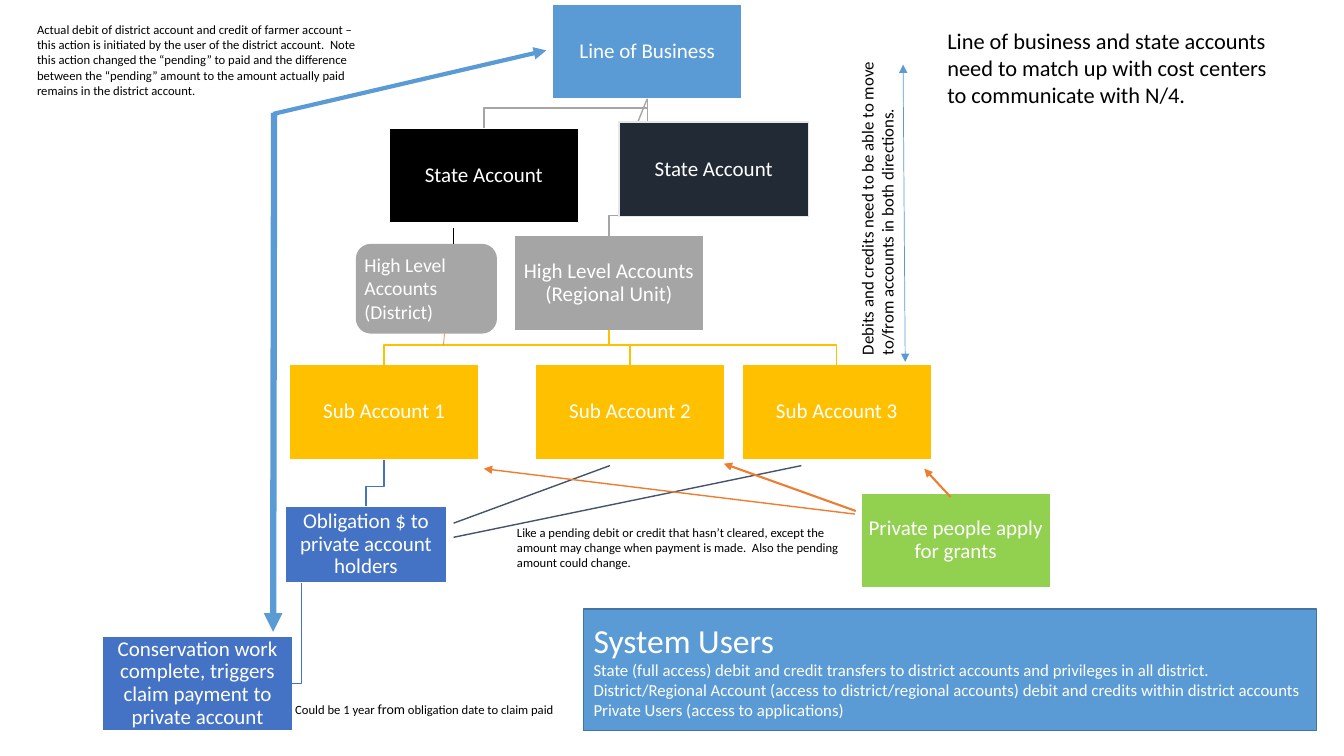
from dataclasses import dataclass

from lxml.etree import SubElement
from pptx import Presentation
from pptx.dml.color import RGBColor
from pptx.enum.shapes import MSO_CONNECTOR, MSO_SHAPE
from pptx.enum.text import MSO_ANCHOR, MSO_AUTO_SIZE, PP_ALIGN
from pptx.oxml.ns import qn
from pptx.util import Pt

BOTTOM, LEFT = 2, 1
BOX_WIDTH, BOX_HEIGHT = 135.4, 67.7
SUB_TOP = 260.6
BEND_RISE = 14.2


@dataclass(frozen=True)
class Theme:
    font: str = "Calibri"
    white: str = "FFFFFF"
    black: str = "000000"
    blue: str = "5B9BD5"
    blue_edge: str = "43739E"
    royal: str = "4472C4"
    gray: str = "A5A5A5"
    district: str = "A6A6A6"
    navy: str = "222A35"
    navy_edge: str = "E7E7E7"
    slate: str = "44546A"
    gold: str = "FFC000"
    green: str = "92D050"
    orange: str = "ED7D31"
    heading: int = 24
    remark: int = 16
    label: int = 15
    district_label: int = 14
    body: int = 12
    small_plus: int = 10
    small: int = 9


class Chart:
    def __init__(self, page, theme):
        self.page = page
        self.theme = theme

    def style_line(self, line, color, width):
        line.color.rgb = RGBColor.from_string(color)
        line.width = Pt(width)

    def style_text(self, para, size, color):
        for span in para.runs:
            span.font.name = self.theme.font
            span.font.size = Pt(size)
            span.font.color.rgb = RGBColor.from_string(color)

    def shape(self, kind, left, top, width, height, fill, edge=None):
        shape = self.page.shapes.add_shape(kind, Pt(left), Pt(top), Pt(width), Pt(height))
        shape.shadow.inherit = False
        shape.fill.solid()
        shape.fill.fore_color.rgb = RGBColor.from_string(fill)
        if edge:
            self.style_line(shape.line, edge, 1)
        else:
            shape.line.fill.background()
        return shape

    def caption(self, shape, text, sizes, inset=None, align=PP_ALIGN.LEFT,
                anchor=MSO_ANCHOR.MIDDLE):
        """Fill a shape with white text, one type size for each line."""
        frame = shape.text_frame
        frame.text = text
        frame.word_wrap = True
        frame.vertical_anchor = anchor
        if inset is not None:
            frame.margin_left = frame.margin_right = Pt(inset)
            frame.margin_top = frame.margin_bottom = Pt(inset)
        for para, size in zip(frame.paragraphs, sizes):
            para.alignment = align
            self.style_text(para, size, self.theme.white)

    def account(self, text, left, top, fill, edge=None, width=BOX_WIDTH, height=BOX_HEIGHT):
        box = self.shape(MSO_SHAPE.RECTANGLE, left, top, width, height, fill,
                         edge or self.theme.white)
        self.caption(box, text, [self.theme.label], 0.75, PP_ALIGN.CENTER)
        box.text_frame.paragraphs[0].line_spacing = 0.9
        return box

    def note(self, spans, left, top, width, height, size, rotation=0):
        box = self.page.shapes.add_textbox(Pt(left), Pt(top), Pt(width), Pt(height))
        box.rotation = rotation
        frame = box.text_frame
        frame.word_wrap = True
        frame.auto_size = MSO_AUTO_SIZE.SHAPE_TO_FIT_TEXT
        para = frame.paragraphs[0]
        for text in spans:
            para.add_run().text = text
        self.style_text(para, size, self.theme.black)
        return box

    def route(self, points, color):
        """Draw an open path through points given in EMU."""
        builder = self.page.shapes.build_freeform(*points[0])
        builder.add_line_segments(points[1:], close=False)
        outline = builder.convert_to_shape()
        outline.shadow.inherit = False
        outline.fill.background()
        self.style_line(outline.line, color, 1)

    def branch(self, parent, child, color):
        """Link a parent's bottom to a child's top, bending just above the child."""
        start = parent.left + parent.width // 2
        end = child.left + child.width // 2
        bend = child.top - Pt(BEND_RISE)
        self.route([(start, parent.top + parent.height), (start, bend),
                    (end, bend), (end, child.top)], color)

    def hang(self, parent, child, color):
        """Link a parent's lower left to the middle of a child's right side."""
        drop = parent.left + parent.width // 10
        middle = child.top + child.height // 2
        self.route([(drop, parent.top + parent.height), (drop, middle),
                    (child.left + child.width, middle)], color)

    def line(self, start, end, color, width, head=False, tail=False):
        line = self.page.shapes.add_connector(
            MSO_CONNECTOR.STRAIGHT, *(Pt(value) for value in start + end))
        self.style_line(line.line, color, width)
        properties = line._element.spPr
        outline = properties.find(qn("a:ln"))
        for tag, wanted in (("a:headEnd", head), ("a:tailEnd", tail)):
            if wanted:
                SubElement(outline, qn(tag), type="triangle")
        SubElement(properties, qn("a:effectLst"))
        return line


def draw_accounts(chart):
    theme = chart.theme
    business = chart.account("Line of Business", 394.6, 2.9, theme.blue)
    regional = chart.account("High Level Accounts (Regional Unit)", 367.2, 168.3, theme.gray)
    subs = [chart.account(f"Sub Account {number}", left, SUB_TOP, theme.gold)
            for number, left in enumerate((206.6, 382.3, 529.9), 1)]
    obligation = chart.account("Obligation $ to private account holders", 203.8, 361.6,
                               theme.royal, width=115.2, height=54.7)
    claim = chart.account("Conservation work complete, triggers claim payment to private account",
                          73.4, 454.4, theme.royal)

    chart.branch(business, regional, theme.gray)
    for sub in reversed(subs):
        chart.branch(regional, sub, theme.gold)
    chart.branch(subs[0], obligation, theme.royal)
    chart.hang(obligation, claim, theme.royal)

    state = chart.account("State Account", 277.9, 91.4, theme.black)
    chart.branch(business, state, theme.gray)
    link = chart.line((462.3, 70.6), (442.1, 121), theme.gray, 1)
    second_state = chart.account("State Account", 442.1, 87.1, theme.navy, theme.navy_edge)
    link.begin_connect(business, BOTTOM)
    link.end_connect(second_state, LEFT)
    chart.account("Private people apply for grants", 614.9, 352.1, theme.green)


def draw_notes(chart):
    theme = chart.theme
    chart.note(["Like a pending debit or credit that hasn’t cleared, except the amount may change "
                "when payment is made.  Also the pending amount could change."],
               362.2, 371.5, 247.7, 40.3, theme.small)
    chart.note(["Actual debit of district account and credit of farmer account – this action is "
                "initiated by the user of the district account.  Note this action changed the "
                "“pending” to paid and the difference between the “pending” amount to the amount "
                "actually paid remains in the district account."],
               19.4, 12.2, 247.7, 61.9, theme.small)
    delay = chart.note(["Could be 1 year ", "from", " obligation date to claim paid"],
                       203.8, 496.8, 247.7, 19.4, theme.small)
    delay.text_frame.paragraphs[0].runs[1].font.size = Pt(theme.small_plus)
    chart.note(["Debits and credits need to be able to move to/from accounts in both directions."],
               502.6, 118.8, 247.7, 36, theme.body, rotation=270)
    chart.note(["Line of business and state accounts need to match up with cost centers to "
                "communicate with N/4."], 669.6, 15.8, 255.6, 65.5, theme.remark)


def draw_arrows(chart):
    theme = chart.theme
    for start, end, color, width, head, tail in (
            ((324, 383.8), (572.4, 332.6), theme.slate, 1, False, False),
            ((324, 373.7), (435.6, 332.6), theme.slate, 1, False, False),
            ((195.8, 80.6), (195.1, 451.4), theme.blue, 4.5, False, True),
            ((195.1, 81.4), (390.2, 36), theme.blue, 3, False, True),
            ((645.1, 46.1), (646.6, 258.5), theme.blue, 0.5, True, True),
            ((679, 355), (660.2, 334.8), theme.orange, 1.5, False, True),
            ((611.3, 365), (517, 331.2), theme.orange, 1.5, False, True),
            ((610.6, 367.2), (345.6, 334.8), theme.orange, 1, False, True)):
        chart.line(start, end, color, width, head, tail)


def draw_panels(chart):
    theme = chart.theme
    users = chart.shape(MSO_SHAPE.FLOWCHART_PROCESS, 416.9, 434.9, 523.4, 87.1,
                        theme.blue, theme.blue_edge)
    chart.caption(users, "System Users\nState (full access) debit and credit transfers to district "
                  "accounts and privileges in all district.\nDistrict/Regional Account (access to "
                  "district/regional accounts) debit and credits within district accounts\n"
                  "Private Users (access to applications)", [theme.heading] + [theme.body] * 3)
    district = chart.shape(MSO_SHAPE.ROUNDED_RECTANGLE, 254.2, 174.2, 100.8, 64.1, theme.district)
    chart.caption(district, "High Level Accounts\n(District)", [theme.district_label] * 2, 3,
                  anchor=MSO_ANCHOR.TOP)
    chart.line((324, 162.7), (324, 174.2), theme.black, 0.5)
    chart.line((317.5, 238.3), (316.8, 246.2), theme.orange, 0.5)


deck = Presentation()
deck.slide_width, deck.slide_height = Pt(960), Pt(540)
slide_chart = Chart(deck.slides.add_slide(deck.slide_layouts[6]), Theme())
for draw in (draw_accounts, draw_notes, draw_arrows, draw_panels):
    draw(slide_chart)
deck.save("out.pptx")
